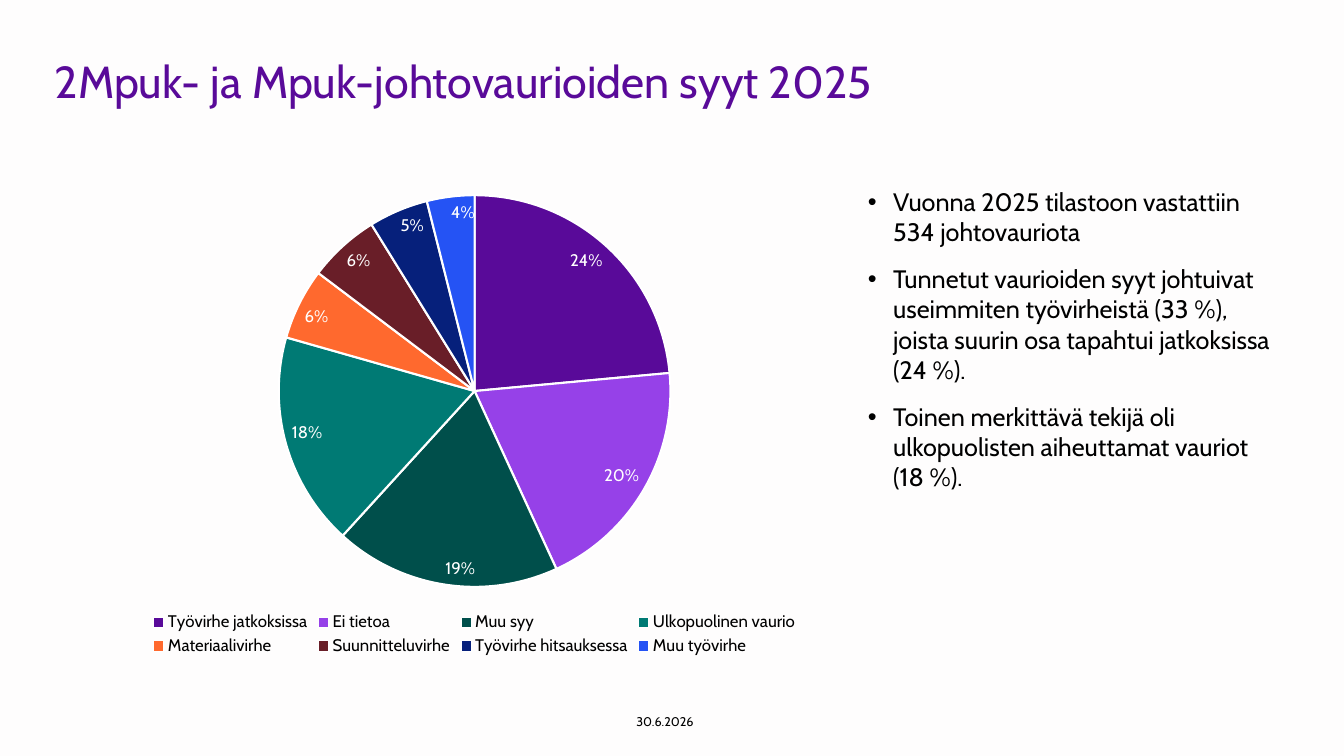
from lxml.etree import SubElement
from pptx import Presentation
from pptx.chart.data import CategoryChartData
from pptx.dml.color import RGBColor
from pptx.enum.chart import XL_CHART_TYPE, XL_LABEL_POSITION, XL_LEGEND_POSITION
from pptx.enum.text import MSO_ANCHOR, PP_ALIGN
from pptx.oxml.ns import qn
from pptx.util import Pt

COLORS = {"paper": "FEFDFD", "title": "590A99", "text": "000000", "white": "FFFFFF"}
CAUSES = [
    ("Työvirhe jatkoksissa", 0.24, "590A99"),
    ("Ei tietoa", 0.20, "9641E8"),
    ("Muu syy", 0.19, "004F4B"),
    ("Ulkopuolinen vaurio", 0.18, "007A74"),
    ("Materiaalivirhe", 0.06, "FF692E"),
    ("Suunnitteluvirhe", 0.06, "691E28"),
    ("Työvirhe hitsauksessa", 0.05, "06207B"),
    ("Muu työvirhe", 0.04, "2553F4"),
]
FINDINGS = [
    "Vuonna 2025 tilastoon vastattiin 534 johtovauriota",
    "Tunnetut vaurioiden syyt johtuivat useimmiten työvirheistä (33 %), "
    "joista suurin osa tapahtui jatkoksissa (24 %).",
    "Toinen merkittävä tekijä oli ulkopuolisten aiheuttamat vauriot (18 %).",
]


def set_values(target, **values):
    """Set every given format value on the target."""
    for name, value in values.items():
        setattr(target, name, value)


def style_font(font, size, color):
    """Give a font the slide's typeface, a size and a colour."""
    set_values(font, name="Cabin", size=Pt(size), bold=False)
    font.color.rgb = RGBColor.from_string(COLORS[color])


def add_text(page, box, texts, size, color, right_inset=7.2, bulleted=False,
             anchor=MSO_ANCHOR.TOP, **layout):
    """Place paragraphs of one style in the given box."""
    frame = page.shapes.add_textbox(*map(Pt, box)).text_frame
    set_values(frame, word_wrap=True, vertical_anchor=anchor, margin_left=0,
               margin_right=Pt(right_inset), margin_top=Pt(3.6), margin_bottom=Pt(3.6))
    for index, text in enumerate(texts):
        para = frame.paragraphs[0] if index == 0 else frame.add_paragraph()
        set_values(para, **layout)
        if index:
            para.space_before = Pt(12)
        if bulleted:
            properties = para._p.get_or_add_pPr()
            properties.set("marL", str(Pt(18)))
            properties.set("indent", str(-Pt(18)))
            SubElement(properties, qn("a:buFont")).set("typeface", "Arial")
            SubElement(properties, qn("a:buChar")).set("char", "•")
        span = para.add_run()
        span.text = text
        style_font(span.font, size, color)


def add_cause_chart(page, box):
    """Draw the pie of damage causes in the given box."""
    data = CategoryChartData(number_format="0%")
    data.categories = [name for name, _, _ in CAUSES]
    data.add_series("Series 1", [share for _, share, _ in CAUSES])
    chart = page.shapes.add_chart(XL_CHART_TYPE.PIE, *map(Pt, box), data).chart
    set_values(chart, has_title=False, has_legend=True)
    set_values(chart.font, name="Arial", size=Pt(10))
    set_values(chart.legend, position=XL_LEGEND_POSITION.BOTTOM, include_in_layout=False)
    style_font(chart.legend.font, 12, "text")

    plot = chart.plots[0]
    set_values(plot, vary_by_categories=True, has_data_labels=True)
    set_values(plot.data_labels, show_value=True, show_percentage=False,
               number_format="0%", number_format_is_linked=False,
               position=XL_LABEL_POSITION.INSIDE_END)
    style_font(plot.data_labels.font, 12, "white")
    for index, (_, _, color) in enumerate(CAUSES):
        slice_format = plot.series[0].points[index].format
        slice_format.fill.solid()
        slice_format.fill.fore_color.rgb = RGBColor.from_string(color)
        slice_format.line.color.rgb = RGBColor.from_string(COLORS["white"])
        slice_format.line.width = Pt(1.5)


def build_causes_page(deck):
    """Add the page with title, pie, findings and date."""
    page = deck.slides.add_slide(deck.slide_layouts[6])
    page.background.fill.solid()
    page.background.fill.fore_color.rgb = RGBColor.from_string(COLORS["paper"])
    add_text(page, (39, 39.5, 880.5, 78.5), ["2Mpuk- ja Mpuk-johtovaurioiden syyt 2025"],
             32, "title", line_spacing=0.9)
    add_text(page, (620, 129.5, 301, 343), FINDINGS, 18, "text", bulleted=True)
    add_text(page, (435, 500.5, 80, 29), ["30.6.2026"], 9, "text", right_inset=0,
             anchor=MSO_ANCHOR.MIDDLE, alignment=PP_ALIGN.CENTER)
    add_cause_chart(page, (39, 129.5, 600, 342))


def main():
    """Build and save the deck."""
    deck = Presentation()
    set_values(deck, slide_width=Pt(960), slide_height=Pt(540))
    build_causes_page(deck)
    deck.save("out.pptx")


if __name__ == "__main__":
    main()
